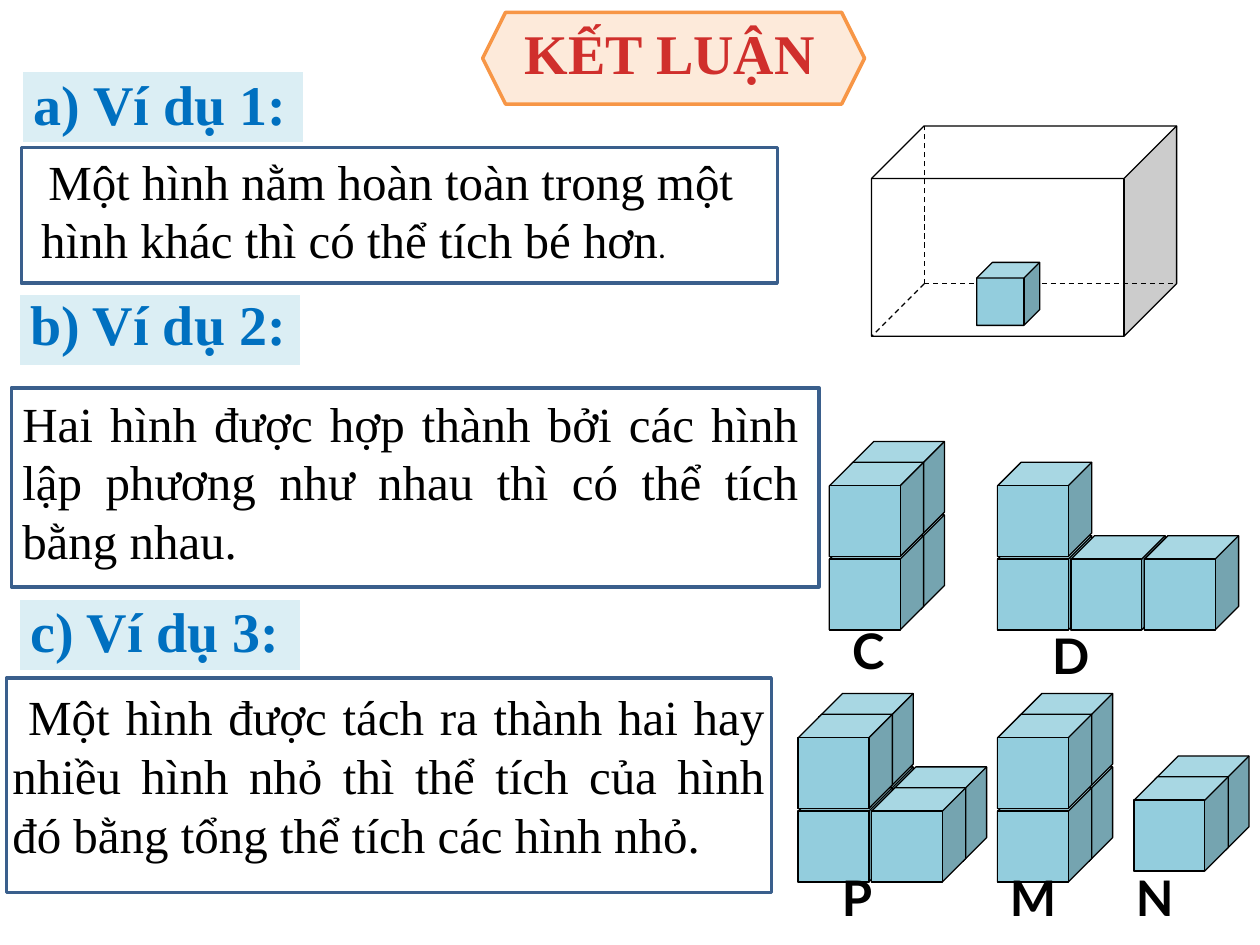
from dataclasses import dataclass

from lxml import etree
from pptx import Presentation
from pptx.dml.color import RGBColor
from pptx.enum.dml import MSO_LINE
from pptx.enum.shapes import MSO_CONNECTOR, MSO_SHAPE
from pptx.enum.text import MSO_ANCHOR, MSO_AUTO_SIZE, PP_ALIGN
from pptx.oxml.ns import qn
from pptx.util import Cm, Pt

RECT, CUBE, HEXAGON = MSO_SHAPE.RECTANGLE, MSO_SHAPE.CUBE, MSO_SHAPE.HEXAGON
FRAME = MSO_SHAPE.FLOWCHART_PROCESS
STRAIGHT, DASH = MSO_CONNECTOR.STRAIGHT, MSO_LINE.DASH
LEFT, CENTER, JUSTIFY = PP_ALIGN.LEFT, PP_ALIGN.CENTER, PP_ALIGN.JUSTIFY


@dataclass(frozen=True)
class Theme:
    black: str = "000000"
    white: str = "FFFFFF"
    cube: str = "93CDDD"
    frame: str = "3A5F8C"
    banner: str = "FDEADA"
    banner_line: str = "F79646"
    title: str = "D02F2C"
    heading: str = "0070C0"
    heading_fill: str = "DBEEF4"
    serif: str = "Times New Roman"
    sans: str = "Calibri"
    label: str = "Lato"
    small: int = 18
    body: int = 28
    large: int = 32
    thin: float = 0.75
    thick: float = 2


theme = Theme()


def draw(shapes, kind, box, line, width=theme.thin, fill=None):
    """Add a preset shape; box is left, top, width, height in cm."""
    sp = shapes.add_shape(kind, *map(Cm, box))
    sp.shadow.inherit = False
    if fill:
        sp.fill.solid()
        sp.fill.fore_color.rgb = RGBColor.from_string(fill)
    else:
        sp.fill.background()
    sp.line.color.rgb = RGBColor.from_string(line)
    sp.line.width = Pt(width)


def write(tf, text, size=theme.body, font=theme.serif, color=theme.black,
          bold=False, align=LEFT, wrap=True):
    """Append a run to the first paragraph of a text frame."""
    tf.word_wrap = wrap
    p = tf.paragraphs[0]
    p.alignment = align
    r = p.add_run()
    r.text = text
    r.font.size = Pt(size)
    r.font.name = font
    r.font.bold = bold
    r.font.color.rgb = RGBColor.from_string(color)


prs = Presentation()
prs.slide_width, prs.slide_height = Cm(25.4), Cm(19.05)
s = prs.slides.add_slide(prs.slide_layouts[5])

# Title on its banner
draw(s.shapes, HEXAGON, (9.73, 0.25, 7.7, 1.85), theme.banner_line,
     theme.thick, theme.banner)
title = s.shapes.title
title.left, title.top, title.width, title.height = map(Cm, (10.29, 0.25, 6.43, 1.63))
tf = title.text_frame
tf.auto_size = MSO_AUTO_SIZE.NONE
tf.vertical_anchor = MSO_ANCHOR.TOP
write(tf, "KẾT LUẬN", size=theme.large, color=theme.title, bold=True,
      align=CENTER, wrap=False)
s.shapes.element.append(title.element)  # in front of the banner

# Headings: text, left, top of the band, top of the text
headings = [
    ("a) Ví dụ 1:", 0.43, 1.42, 1.27),
    ("b) Ví dụ 2:", 0.36, 5.92, 5.72),
    ("c) Ví dụ 3:", 0.36, 12.07, 11.91),
]
for text, left, band_top, text_top in headings:
    group = s.shapes.add_group_shape()
    draw(group.shapes, RECT, (left, band_top, 5.72, 1.48), theme.white,
         theme.thick, theme.heading_fill)
    tb = group.shapes.add_textbox(Cm(left), Cm(text_top), Cm(6.2), Cm(1.63))
    write(tb.text_frame, text, size=theme.large, color=theme.heading, bold=True)

# Conclusions: frame, text box, alignment, runs
small = dict(size=theme.small, font=theme.sans)
conclusions = [
    ((0.43, 2.97, 15.24, 2.74), (0.58, 2.92, 15.32, 3.43), LEFT,
     [(" ", small),
      ("Một hình nằm hoàn toàn trong một hình khác thì có thể tích bé hơn", {}),
      (".", small)]),
    ((0.23, 7.82, 16.28, 4.01), (0.2, 7.8, 16.15, 3.84), JUSTIFY,
     [("Hai hình được hợp thành bởi các hình lập phương như nhau "
       "thì có thể tích bằng nhau.", {})]),
    ((0.13, 13.67, 15.42, 4.32), (0, 13.72, 15.67, 3.84), JUSTIFY,
     [(" Một hình được tách ra thành hai hay nhiều hình nhỏ "
       "thì thể tích của hình đó bằng tổng thể tích các hình nhỏ.", {})]),
]
for frame, box, align, runs in conclusions:
    draw(s.shapes, FRAME, frame, theme.frame, theme.thick)
    tf = s.shapes.add_textbox(*map(Cm, box)).text_frame
    for text, style in runs:
        write(tf, text, align=align, **style)

# Large box with its hidden edges, and the small cube inside
x, y, w, h = 17.57, 2.54, 6.15, 4.24
depth = h / 4
corner = (x + depth, y + h - depth)
group = s.shapes.add_group_shape()
draw(group.shapes, CUBE, (x, y, w, h), theme.black, fill=theme.white)
for end in [(x + depth, y), (x + w, y + h - depth), (x, y + h)]:
    edge = group.shapes.add_connector(STRAIGHT, *map(Cm, corner + end))
    edge.line.color.rgb = RGBColor.from_string(theme.black)
    edge.line.width = Pt(theme.thin)
    edge.line.dash_style = DASH
    etree.SubElement(edge.element.spPr, qn("a:effectLst"))
draw(s.shapes, CUBE, (19.69, 5.29, 1.27, 1.27), theme.black, fill=theme.cube)

# Stacks of unit cubes: left and top of the lowest front cube,
# height of each column, rows in depth
SIZE, FACE, STEP, BACK = 1.9, 1.43, 1.48, 0.42
stacks = [
    (16.72, 10.8, [2], 2),
    (20.11, 10.8, [2, 1, 1], 1),
    (16.09, 15.88, [2, 1], 2),
    (20.11, 15.88, [2], 2),
    (22.86, 15.66, [1], 2),
]
for left, top, heights, rows in stacks:
    group = s.shapes.add_group_shape()
    for col, height in enumerate(heights):
        for level in range(height):
            for row in reversed(range(rows)):
                x = left + col * STEP + row * BACK
                y = top - level * STEP - row * BACK
                draw(group.shapes, CUBE, (x, y, SIZE, SIZE), theme.black,
                     fill=theme.cube)
                draw(group.shapes, RECT, (x, y + SIZE - FACE, FACE, FACE),
                     theme.black, fill=theme.cube)

# Stack names: text, left, top, width
labels = [
    ("C", 16.93, 12.38, 1.69),
    ("D", 20.96, 12.49, 2.12),
    ("P", 16.72, 17.36, 2.12),
    ("M", 20.11, 17.36, 2.12),
    ("N", 22.65, 17.36, 1.48),
]
for text, left, top, width in labels:
    tb = s.shapes.add_textbox(Cm(left), Cm(top), Cm(width), Cm(1.44))
    write(tb.text_frame, text, font=theme.label, bold=True)

prs.save("out.pptx")
